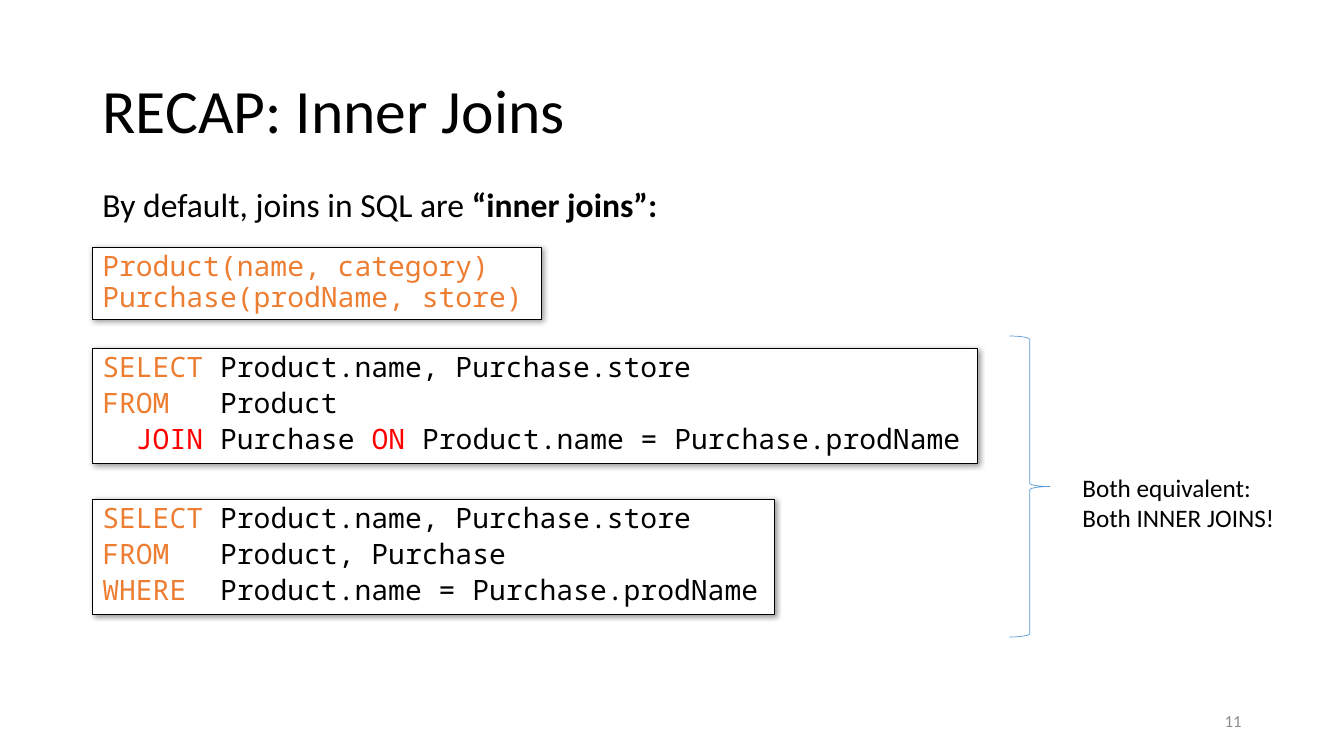
"""Build the recap slide on inner joins."""
from lxml import etree
from pptx import Presentation
from pptx.dml.color import RGBColor
from pptx.enum import shapes, text
from pptx.oxml import ns
from pptx.util import Pt

BLACK = RGBColor(0x00, 0x00, 0x00)
WHITE = RGBColor(0xFF, 0xFF, 0xFF)
ORANGE = RGBColor(0xED, 0x7D, 0x31)
RED = RGBColor(0xFF, 0x00, 0x00)
BLUE = RGBColor(0x5B, 0x9B, 0xD5)
GREY = RGBColor(0x8C, 0x8C, 0x8C)
SANS, MONO = "Calibri", "Noto Sans Mono"

TITLE = [[("RECAP: Inner Joins", BLACK)]]
INTRO = [[("By default, joins in SQL are ", BLACK), ("“inner joins”:", BLACK, True)]]
NOTE = [[("Both equivalent:", BLACK)], [("Both INNER JOINS!", BLACK)]]
NUMBER = [[("11", GREY)]]

SCHEMA = [[("Product(name, category)", ORANGE)], [("Purchase(prodName, store)", ORANGE)]]
SELECT = [("SELECT ", ORANGE), ("Product.name, Purchase.store", BLACK)]
JOIN_QUERY = [
    SELECT,
    [("FROM", ORANGE), ("   Product", BLACK)],
    [("  JOIN ", RED), ("Purchase ", BLACK), ("ON ", RED),
     ("Product.name = Purchase.prodName", BLACK)],
]
WHERE_QUERY = [
    SELECT,
    [("FROM   ", ORANGE), ("Product, Purchase", BLACK)],
    [("WHERE  ", ORANGE), ("Product.name = Purchase.prodName", BLACK)],
]

LEFT = 66
CODE_BOXES = [
    (SCHEMA, 177, 320.5, 51, 0),
    (JOIN_QUERY, 249, 632, 82, 4),
    (WHERE_QUERY, 357, 487.5, 82, 4),
]


def place(shape, left, top, width, height):
    """Move and size a shape, in points."""
    shape.left, shape.top = Pt(left), Pt(top)
    shape.width, shape.height = Pt(width), Pt(height)


def write(tf, lines, size, font=SANS, spacing=0.9, before=0, align=text.PP_ALIGN.LEFT):
    """Fill a text frame with lines of coloured runs."""
    tf.auto_size = text.MSO_AUTO_SIZE.NONE
    for i, line in enumerate(lines):
        p = tf.paragraphs[0] if i == 0 else tf.add_paragraph()
        p.alignment, p.line_spacing, p.space_before = align, spacing, Pt(before)
        p.font.name, p.font.size = font, Pt(size)
        for words, color, *bold in line:
            r = p.add_run()
            r.text = words
            r.font.color.rgb = color
            if bold:
                r.font.bold = True


def add_shadow(shape):
    """Give a shape a soft shadow to the lower right."""
    shape.shadow.inherit = False
    effects = shape._element.spPr.find(ns.qn("a:effectLst"))
    shadow = etree.SubElement(effects, ns.qn("a:outerShdw"), blurRad=str(Pt(4)),
                              dist=str(Pt(1)), dir="2700000", algn="tl", rotWithShape="0")
    color = etree.SubElement(shadow, ns.qn("a:srgbClr"), val=str(BLACK))
    etree.SubElement(color, ns.qn("a:alpha"), val="40000")


def add_code_box(s, lines, top, width, height, before):
    """Draw a framed block of code."""
    sp = s.shapes.add_shape(shapes.MSO_SHAPE.RECTANGLE, Pt(LEFT), Pt(top), Pt(width), Pt(height))
    sp.fill.solid()
    sp.fill.fore_color.rgb = WHITE
    sp.line.color.rgb, sp.line.width = BLACK, Pt(0.75)
    add_shadow(sp)
    tf = sp.text_frame
    tf.word_wrap, tf.vertical_anchor = True, text.MSO_ANCHOR.TOP
    write(tf, lines, 20, MONO, before=before)


def main():
    """Build and save the slide."""
    prs = Presentation()
    prs.slide_width, prs.slide_height = Pt(960), Pt(540)
    s = prs.slides.add_slide(prs.slide_layouts[1])

    title, body = s.shapes.title, s.placeholders[1]
    place(title, LEFT, 29, 828, 104)
    title.text_frame.vertical_anchor = text.MSO_ANCHOR.MIDDLE
    write(title.text_frame, TITLE, 44)

    place(body, LEFT, 131, 684, 324)
    write(body.text_frame, INTRO, 24, before=10)
    pPr = body.text_frame.paragraphs[0]._p.get_or_add_pPr()
    pPr.set("marL", str(Pt(18)))
    pPr.set("indent", str(Pt(-18)))
    bullet = etree.Element(ns.qn("a:buNone"))
    pPr.find(ns.qn("a:spcBef")).addnext(bullet)

    for box in CODE_BOXES:
        add_code_box(s, *box)

    brace = s.shapes.add_shape(shapes.MSO_SHAPE.RIGHT_BRACE, Pt(721), Pt(240), Pt(29), Pt(215))
    brace.fill.background()
    brace.line.color.rgb, brace.line.width = BLUE, Pt(0.5)
    brace.shadow.inherit = False

    note = s.shapes.add_textbox(Pt(766), Pt(333.5), Pt(153.5), Pt(51))
    note.text_frame.word_wrap = False
    write(note.text_frame, NOTE, 18, spacing=1.0)

    number = s.shapes.add_textbox(Pt(678), Pt(500.5), Pt(216), Pt(29))
    number.text_frame.word_wrap = True
    number.text_frame.vertical_anchor = text.MSO_ANCHOR.MIDDLE
    write(number.text_frame, NUMBER, 12, spacing=1.0, align=text.PP_ALIGN.RIGHT)

    prs.save("out.pptx")


if __name__ == "__main__":
    main()
